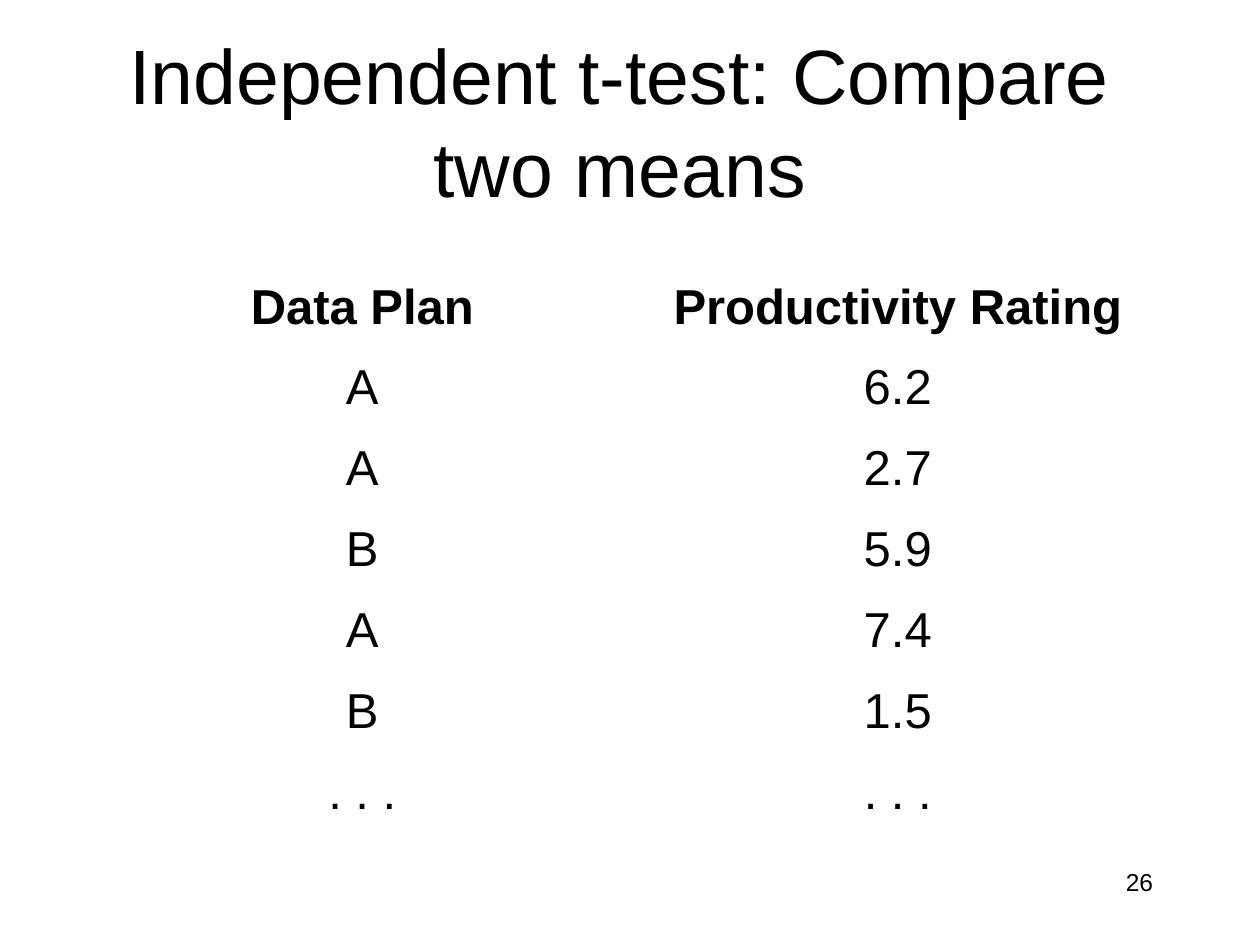
from pptx import Presentation
from pptx.dml.color import RGBColor
from pptx.enum.text import MSO_ANCHOR as Anchor, MSO_AUTO_SIZE as AutoSize, PP_ALIGN as Align
from pptx.util import Inches, Pt

FONT = "Arial"
INK = "000000"
ROWS = [
    ("Data Plan", "Productivity Rating"),
    ("A", "6.2"),
    ("A", "2.7"),
    ("B", "5.9"),
    ("A", "7.4"),
    ("B", "1.5"),
    (". . .", ". . ."),
]


def color(hex_code):
    return RGBColor.from_string(hex_code)


def write(tf, text, size, align, bold=False):
    p = tf.paragraphs[0]
    p.alignment = align
    r = p.add_run()
    r.text = text
    r.font.name = FONT
    r.font.size = Pt(size)
    r.font.bold = bold
    r.font.color.rgb = color(INK)


def add_title(s, text):
    sp = s.shapes.title
    sp.left, sp.top, sp.width, sp.height = map(Inches, (0.67, 0.33, 8.5, 1.25))
    tf = sp.text_frame
    tf.word_wrap = True
    tf.auto_size = AutoSize.NONE
    tf.vertical_anchor = Anchor.MIDDLE
    write(tf, text, 44, Align.CENTER)


def add_data_table(s, rows):
    frame = s.shapes.add_table(len(rows), len(rows[0]), Inches(0.75), Inches(2.17),
                               Inches(8.5), Inches(4.5))
    table = frame.table
    table.first_row = False
    table.horz_banding = False
    for i, row in enumerate(rows):
        for j, text in enumerate(row):
            cell = table.cell(i, j)
            cell.fill.background()
            write(cell.text_frame, text, 28, Align.CENTER, bold=i == 0)


def add_page_number(s, number):
    sp = s.shapes.add_textbox(Inches(7.17), Inches(6.83), Inches(2.08), Inches(0.5))
    sp.text_frame.word_wrap = True
    write(sp.text_frame, number, 14, Align.RIGHT)


def main():
    prs = Presentation()
    prs.slide_width, prs.slide_height = Inches(10), Inches(7.5)
    s = prs.slides.add_slide(prs.slide_layouts[5])
    add_title(s, "Independent t-test: Compare two means")
    add_data_table(s, ROWS)
    add_page_number(s, "26")
    prs.save("out.pptx")


if __name__ == "__main__":
    main()
